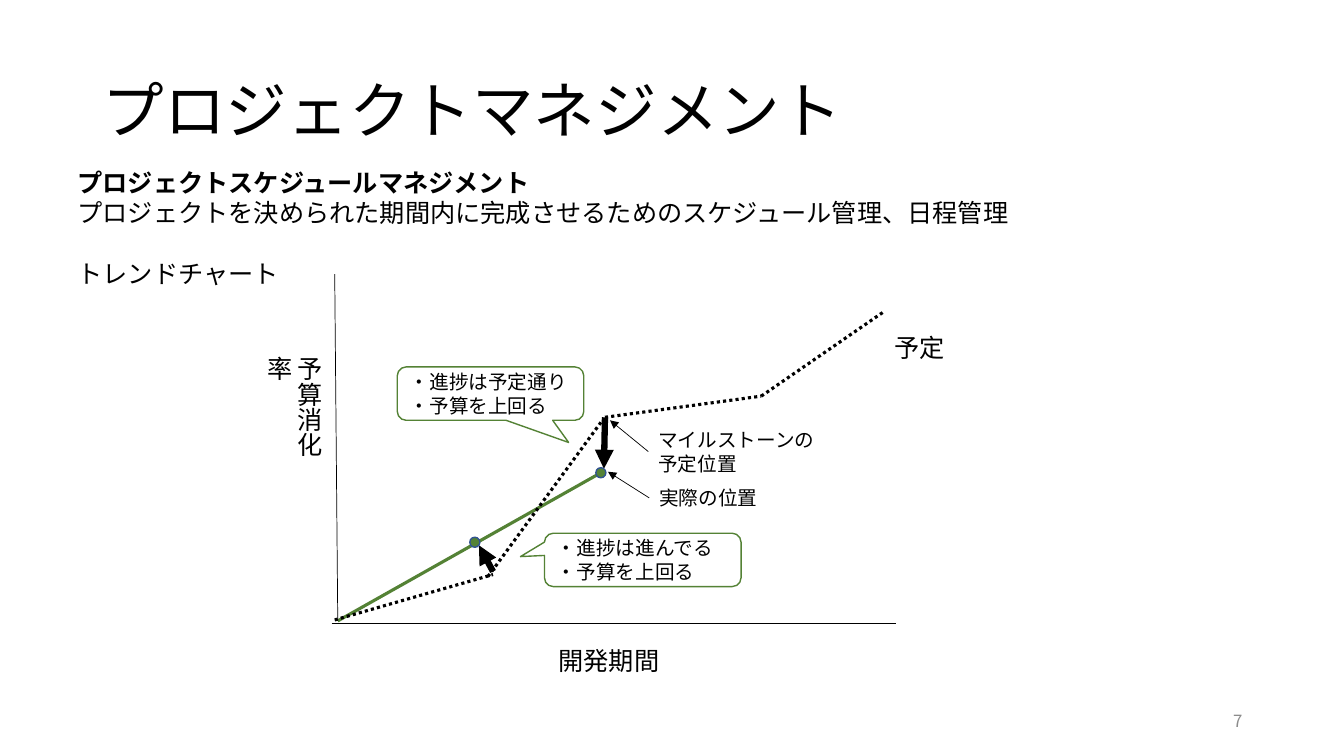
"""Builds the project management slide with its trend chart."""
import dataclasses
import typing

import lxml.etree
import pptx
import pptx.dml.color
import pptx.enum.dml
import pptx.enum.shapes
import pptx.enum.text
import pptx.oxml.ns
import pptx.util

PX = 9144
FONT = "Noto Sans CJK JP"
COLORS = {"text": "000000", "number": "8C8C8C", "green": "548235", "marker": "325491"}
SHAPE = pptx.enum.shapes.MSO_SHAPE
ANCHOR = pptx.enum.text.MSO_ANCHOR
ALIGN = pptx.enum.text.PP_ALIGN
Point = tuple[int, int]
Box = tuple[int, int, int, int]


@dataclasses.dataclass(frozen=True)
class Label:
    box: Box
    lines: tuple[str, ...]
    size: int = 18
    color: str = "text"
    middle: bool = False
    right: bool = False
    vertical: bool = False
    spacing: typing.Optional[float] = None


@dataclasses.dataclass(frozen=True)
class Line:
    points: tuple[Point, ...]
    width: float = 0.5
    color: str = "text"
    dotted: bool = False
    arrow: bool = False


@dataclasses.dataclass(frozen=True)
class Callout:
    box: Box
    tip: tuple[float, float]
    lines: tuple[str, ...]


LABELS = (
    Label((92, 40, 1150, 145), ("プロジェクトマネジメント",), 44, middle=True, spacing=0.9),
    Label((942, 695, 300, 40), ("7",), 12, "number", middle=True, right=True),
    Label((277, 344, 50, 140), ("予算消化率",), vertical=True),
    Label((544, 635, 146, 40), ("開発期間",)),
    Label((643, 420, 185, 57), ("マイルストーンの", "予定位置"), 14),
    Label((644, 477, 132, 34), ("実際の位置",), 14),
    Label((877, 325, 87, 40), ("予定",)),
)
INTRO = Label((67, 161, 1199, 192), (
    "プロジェクトスケジュールマネジメント",
    "プロジェクトを決められた期間内に完成させるためのスケジュール管理、日程管理",
    "トレンドチャート",
))
LINES = (
    Line(((335, 616), (596, 469)), 2.25, "green"),
    Line(((332, 272), (335, 616))),
    Line(((329, 618), (889, 618))),
    Line(((332, 615), (489, 570)), 2.25, dotted=True),
    Line(((484, 572), (596, 419)), 2.25, dotted=True),
    Line(((600, 414), (755, 393), (877, 309)), 2.25, dotted=True),
    Line(((489, 567), (475, 541)), 4.5, arrow=True),
    Line(((600, 414), (599, 465)), 4.5, arrow=True),
    Line(((643, 448), (605, 417)), arrow=True),
    Line(((644, 494), (603, 468)), arrow=True),
)
MARKERS: tuple[Box, ...] = ((591, 464, 10, 10), (466, 533, 10, 10))
CALLOUTS = (
    Callout((540, 529, 195, 53), (-0.622, -0.062), ("・進捗は進んでる", "・予算を上回る")),
    Callout((394, 364, 185, 53), (0.419, 0.916), ("・進捗は予定通り", "・予算を上回る")),
)


def rgb(name: str) -> pptx.dml.color.RGBColor:
    return pptx.dml.color.RGBColor.from_string(COLORS[name])


def emu(lengths: tuple[int, ...]) -> list[int]:
    return [n * PX for n in lengths]


def add_xml(parent: typing.Any, tag: str, **attrs: str) -> None:
    lxml.etree.SubElement(parent, pptx.oxml.ns.qn(tag), attrs)


def write(tf: typing.Any, lines: tuple[str, ...], size: int, color: str = "text") -> None:
    for i, line in enumerate(lines):
        p = tf.add_paragraph() if i else tf.paragraphs[0]
        r = p.add_run()
        r.text = line
        p.font.name = FONT
        p.font.size = pptx.util.Pt(size)
        p.font.color.rgb = rgb(color)
        add_xml(p.font._element, "a:ea", typeface=FONT)


def draw_label(s: typing.Any, label: Label) -> typing.Any:
    tf = s.shapes.add_textbox(*emu(label.box)).text_frame
    tf.word_wrap = True
    tf.vertical_anchor = ANCHOR.MIDDLE if label.middle else ANCHOR.TOP
    write(tf, label.lines, label.size, label.color)
    for p in tf.paragraphs:
        p.alignment = ALIGN.RIGHT if label.right else ALIGN.LEFT
        p.line_spacing = label.spacing
    if label.vertical:
        tf._txBody.bodyPr.set("vert", "eaVert")
    return tf


def draw_line(s: typing.Any, line: Line) -> None:
    for start, end in zip(line.points, line.points[1:]):
        c = s.shapes.add_connector(
            pptx.enum.shapes.MSO_CONNECTOR.STRAIGHT, *emu(start + end))
        c.line.width = pptx.util.Pt(line.width)
        c.line.color.rgb = rgb(line.color)
        if line.dotted:
            c.line.dash_style = pptx.enum.dml.MSO_LINE.ROUND_DOT
        if line.arrow:
            add_xml(c.line._get_or_add_ln(), "a:tailEnd", type="triangle")
        add_xml(c._element.spPr, "a:effectLst")


def draw_marker(s: typing.Any, box: Box) -> None:
    sp = s.shapes.add_shape(SHAPE.FLOWCHART_CONNECTOR, *emu(box))
    sp.shadow.inherit = False
    sp.fill.solid()
    sp.fill.fore_color.rgb = rgb("green")
    sp.line.color.rgb = rgb("marker")
    sp.line.width = pptx.util.Pt(1)


def draw_callout(s: typing.Any, callout: Callout) -> None:
    sp = s.shapes.add_shape(SHAPE.ROUNDED_RECTANGULAR_CALLOUT, *emu(callout.box))
    sp.adjustments[0], sp.adjustments[1] = callout.tip
    sp.shadow.inherit = False
    sp.fill.background()
    sp.line.color.rgb = rgb("green")
    sp.line.width = pptx.util.Pt(1)
    tf = sp.text_frame
    tf.word_wrap = True
    tf.vertical_anchor = ANCHOR.MIDDLE
    write(tf, callout.lines, 14)
    for p in tf.paragraphs:
        p.alignment = ALIGN.LEFT


def main() -> None:
    prs = pptx.Presentation()
    prs.slide_width, prs.slide_height = emu((1333, 750))
    s = prs.slides.add_slide(prs.slide_layouts[6])
    for label in LABELS:
        draw_label(s, label)
    heading, _, chart_name = draw_label(s, INTRO).paragraphs
    heading.font.name = "Arial"
    heading.font.bold = True
    chart_name.space_before = pptx.util.Pt(22)
    for line in LINES:
        draw_line(s, line)
    for box in MARKERS:
        draw_marker(s, box)
    for callout in CALLOUTS:
        draw_callout(s, callout)
    prs.save("out.pptx")


if __name__ == "__main__":
    main()
